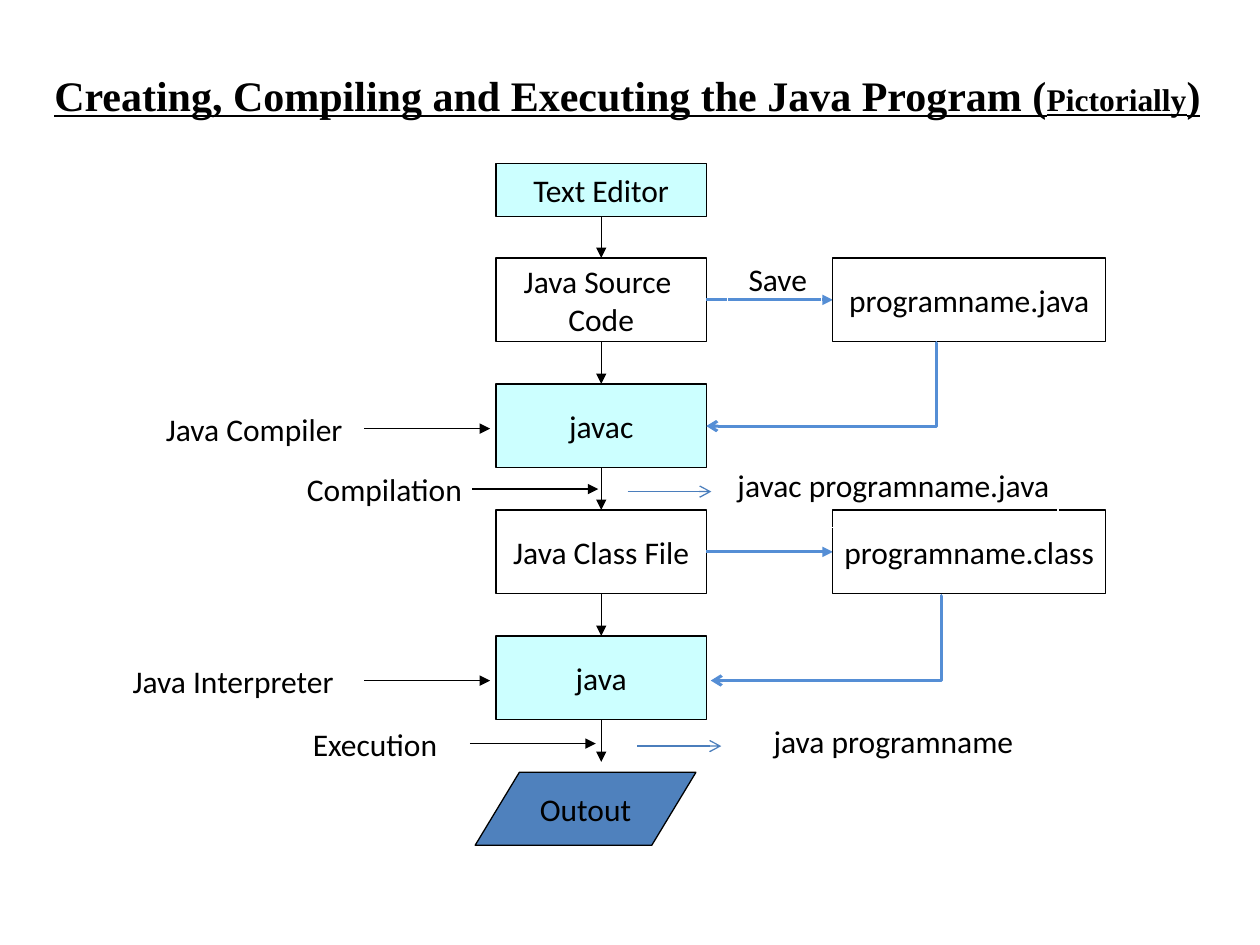
"""Build a flow chart of creating, compiling and executing a Java program."""
from lxml import etree
from pptx import Presentation
from pptx import util as u
from pptx.dml.color import RGBColor
from pptx.enum import shapes, text
from pptx.oxml import ns

BLACK, WHITE, AQUA, BLUE, STEEL, HINT = "000000", "FFFFFF", "CCFFFF", "558ED5", "4F81BD", "4B7EBC"
BOX_LEFT, BOX_WIDTH, BOX_HEIGHT = 10, 4.24, 1.69
FIRST_TOP, STEP = 5.2, 2.54
FILE_LEFT, FILE_WIDTH = 16.79, 5.5
CENTRE = BOX_LEFT + BOX_WIDTH / 2
BOX_RIGHT = BOX_LEFT + BOX_WIDTH

rgb = RGBColor.from_string
deck = Presentation()
deck.slide_width, deck.slide_height = u.Cm(25.4), u.Cm(19.05)
slide = deck.slides.add_slide(deck.slide_layouts[5])


def add_block(wording, left, top, width, height=BOX_HEIGHT, fill=None, line=BLACK,
              kind=shapes.MSO_SHAPE.RECTANGLE):
    block = slide.shapes.add_shape(kind, *map(u.Cm, (left, top, width, height)))
    block.shadow.inherit = False
    if fill:
        block.fill.solid()
        block.fill.fore_color.rgb = rgb(fill)
    else:
        block.fill.background()
    block.line.color.rgb = rgb(line)
    block.line.width = u.Pt(0.75)
    frame = block.text_frame
    frame.text = wording
    frame.word_wrap = False
    frame.vertical_anchor = text.MSO_ANCHOR.MIDDLE
    frame.paragraphs[0].alignment = text.PP_ALIGN.CENTER
    for run in frame.paragraphs[0].runs:
        for key, value in {"name": "Calibri", "size": u.Pt(18)}.items():
            setattr(run.font, key, value)
        run.font.color.rgb = rgb(BLACK)


def add_arrow(x1, y1, x2, y2, color=BLACK, width=0.75, head="triangle", bent=False):
    kind = shapes.MSO_CONNECTOR.ELBOW if bent else shapes.MSO_CONNECTOR.STRAIGHT
    arrow = slide.shapes.add_connector(kind, *map(u.Cm, (x1, y1, x2, y2)))
    arrow.line.color.rgb = rgb(color)
    arrow.line.width = u.Pt(width)
    properties = arrow._element.spPr
    etree.SubElement(properties.find(ns.qn("a:ln")), ns.qn("a:tailEnd"), type=head)
    etree.SubElement(properties, ns.qn("a:effectLst"))
    if bent:
        guides = properties.find(ns.qn("a:prstGeom")).find(ns.qn("a:avLst"))
        etree.SubElement(guides, ns.qn("a:gd"), name="adj1", fmla="val 500")


title = slide.shapes.title
title.left, title.top, title.width, title.height = map(u.Cm, (0.84, 1.27, 24.13, 1.27))
title_format = {"word_wrap": True, "auto_size": text.MSO_AUTO_SIZE.NONE,
                "vertical_anchor": text.MSO_ANCHOR.TOP}
for key, value in title_format.items():
    setattr(title.text_frame, key, value)
heading = title.text_frame.paragraphs[0]
heading.alignment = text.PP_ALIGN.LEFT
for wording, size in [("Creating, Compiling and Executing the Java Program (", 24),
                      ("Pictorially", 18), (")", 24)]:
    run = heading.add_run()
    run.text = wording
    run_format = {"name": "Times New Roman", "size": u.Pt(size), "bold": True, "underline": True}
    for key, value in run_format.items():
        setattr(run.font, key, value)
    run.font.color.rgb = rgb(BLACK)

add_block("Text Editor", BOX_LEFT, 3.3, BOX_WIDTH, 1.06, AQUA)
stages = [("Java Source \vCode", None), ("javac", AQUA), ("Java Class File", None), ("java", AQUA)]
for row, (wording, fill) in enumerate(stages):
    add_block(wording, BOX_LEFT, FIRST_TOP + row * STEP, BOX_WIDTH, fill=fill)
add_block("Outout", 9.58, 15.57, 4.45, 1.47, STEEL, kind=shapes.MSO_SHAPE.FLOWCHART_DATA)

for row in range(len(stages) + 1):
    stage_top = FIRST_TOP + row * STEP
    add_arrow(CENTRE, stage_top - 0.84, CENTRE, stage_top)

for row, wording in [(0, "programname.java"), (2, "programname.class")]:
    file_top = FIRST_TOP + row * STEP
    middle = file_top + BOX_HEIGHT / 2
    add_arrow(BOX_RIGHT, middle, FILE_LEFT, middle, BLUE, 1.75)
    add_block(wording, FILE_LEFT, file_top, FILE_WIDTH)

for x1, y1, x2, y2 in [(18.9, 6.9, 14.24, 8.59), (19, 12.01, 14.33, 13.72)]:
    add_arrow(x1, y1, x2, y2, BLUE, 1.75, "arrow", bent=True)

for x, y in [(9.52, 9.86), (7.34, 8.64), (7.34, 13.72), (9.47, 14.99)]:
    add_arrow(x, y, x + 2.54, y)

for wording, left, top, width in [
    (" Save", 14.66, 4.78, 1.9),
    (" Compilation", 5.99, 9.02, 3.38),
    ("Java Compiler", 3.12, 7.8, 4.01),
    ("Java Interpreter", 2.26, 12.88, 4.88),
    ("Execution", 5.87, 14.15, 3.38),
    (" javac programname.java", 14.55, 8.94, 6.78),
    (" java programname", 14.55, 14.1, 6.78),
]:
    add_block(wording, left, top, width, line=WHITE)

for x, y in [(12.65, 9.91), (12.85, 15.04)]:
    add_arrow(x, y, x + 1.69, y, HINT, head="arrow")

deck.save("out.pptx")
